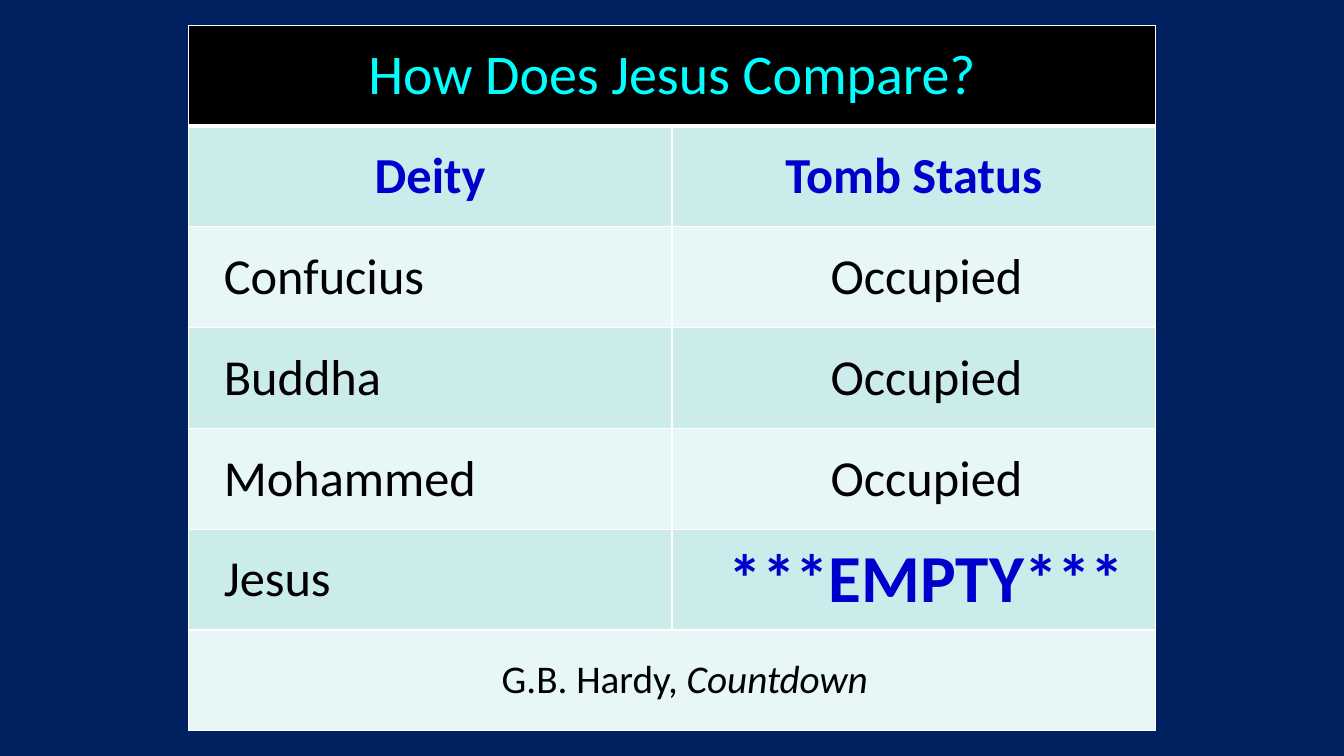
import pptx
import pptx.dml.color
import pptx.enum.text
import pptx.oxml
import pptx.oxml.ns
import pptx.util
from pptx.dml.color import RGBColor
from pptx.util import Cm, Pt

NAVY = RGBColor(0x00, 0x20, 0x60)
BLACK = RGBColor(0x00, 0x00, 0x00)
WHITE = RGBColor(0xFF, 0xFF, 0xFF)
CYAN = RGBColor(0x00, 0xFF, 0xFF)
BLUE = RGBColor(0x00, 0x00, 0xCC)
TEAL = RGBColor(0xCC, 0xEC, 0xEC)
PALE_TEAL = RGBColor(0xE7, 0xF6, 0xF6)

LEFT = pptx.enum.text.PP_ALIGN.LEFT
CENTER = pptx.enum.text.PP_ALIGN.CENTER

PAGE_WIDTH, PAGE_HEIGHT = Cm(33.87), Cm(19.05)
COLUMN_WIDTH, ROW_HEIGHT = Cm(12.19), Cm(2.54)
INDENT = Cm(0.64)

HEADING = {"size": Pt(40), "color": CYAN}
COLUMN_HEAD = {"size": Pt(36), "color": BLUE, "bold": True}
BODY = {"size": Pt(36), "color": BLACK}
EMPHASIS = {"size": Pt(48), "color": BLUE, "bold": True}
SOURCE = {"size": Pt(28), "color": BLACK}
SOURCE_TITLE = {**SOURCE, "italic": True}

DEITIES = [
    ("Confucius", "Occupied", BODY),
    ("Buddha", "Occupied", BODY),
    ("Mohammed", "Occupied", BODY),
    ("Jesus", "***EMPTY***", EMPHASIS),
]


class SlideBuilder:
    def __init__(self, deck, font):
        self.font = font
        self.page = deck.slides.add_slide(deck.slide_layouts[6])

    def background(self, color):
        fill = self.page.background.fill
        fill.solid()
        fill.fore_color.rgb = color

    def table(self, rows, columns):
        """Add a table centred on the page."""
        width, height = COLUMN_WIDTH * columns, ROW_HEIGHT * rows
        left, top = (PAGE_WIDTH - width) // 2, (PAGE_HEIGHT - height) // 2
        frame = self.page.shapes.add_table(rows, columns, left, top, width, height)
        return frame.table

    def cell(self, cell, color, borders):
        cell.vertical_anchor = pptx.enum.text.MSO_ANCHOR.MIDDLE
        cell.fill.solid()
        cell.fill.fore_color.rgb = color
        properties = cell._tc.get_or_add_tcPr()
        for index, (side, width) in enumerate(borders.items()):
            line = pptx.oxml.parse_xml(
                f'<a:ln{side} {pptx.oxml.ns.nsdecls("a")} w="{width}">'
                f'<a:solidFill><a:srgbClr val="{WHITE}"/></a:solidFill></a:ln{side}>'
            )
            properties.insert(index, line)

    def text(self, cell, spans, align=CENTER, indent=0):
        para = cell.text_frame.paragraphs[0]
        para.alignment = align
        if indent:
            para._p.get_or_add_pPr().set("marL", str(int(indent)))
        for words, style in spans:
            span = para.add_run()
            span.text = words
            values = {"name": self.font, "bold": False, **style}
            span.font.color.rgb = values.pop("color")
            for name, value in values.items():
                setattr(span.font, name, value)


def main():
    deck = pptx.Presentation()
    deck.slide_width, deck.slide_height = PAGE_WIDTH, PAGE_HEIGHT
    builder = SlideBuilder(deck, "Calibri")
    builder.background(NAVY)

    table = builder.table(len(DEITIES) + 3, 2)
    last = len(table.rows) - 1
    for index, row in enumerate(table.rows):
        color = BLACK if index == 0 else TEAL if index % 2 else PALE_TEAL
        borders = {
            "L": Pt(1),
            "R": Pt(1),
            "T": Pt(3 if index == 1 else 1),
            "B": Pt(3 if index == 0 else 1),
        }
        for cell in row.cells:
            builder.cell(cell, color, borders)
    for index in (0, last):
        table.cell(index, 0).merge(table.cell(index, 1))

    builder.text(table.cell(0, 0), [("How Does Jesus Compare?", HEADING)])
    for column, head in enumerate(["Deity", "Tomb Status"]):
        builder.text(table.cell(1, column), [(head, COLUMN_HEAD)])
    for index, (deity, status, style) in enumerate(DEITIES, start=2):
        builder.text(table.cell(index, 0), [(deity, BODY)], LEFT, INDENT)
        builder.text(table.cell(index, 1), [(status, style)], CENTER, INDENT)
    source = [("G.B. Hardy, ", SOURCE), ("Countdown", SOURCE_TITLE)]
    builder.text(table.cell(last, 0), source, CENTER, INDENT)

    deck.save("out.pptx")


if __name__ == "__main__":
    main()
